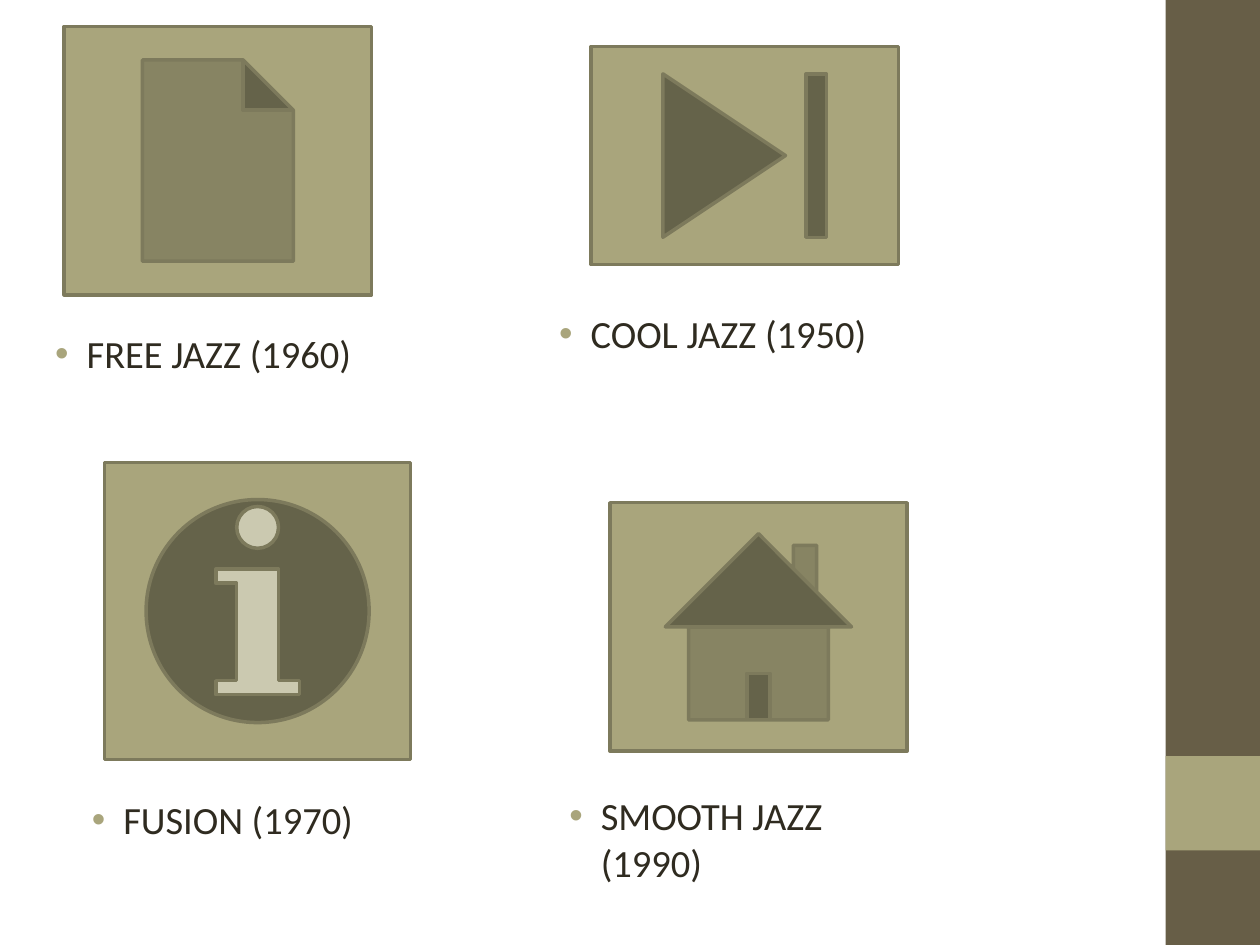
import pptx
import pptx.dml.color
import pptx.enum.shapes
import pptx.enum.text
import pptx.oxml.ns
import pptx.util
from lxml import etree

Inches = pptx.util.Inches
SHAPE = pptx.enum.shapes.MSO_SHAPE

BROWN = "675E47"
OLIVE = "A9A57C"
OUTLINE = "7D7A5C"
INK = "2F2B20"

# Jazz styles: label, label left/top, button shape, button left/top/width/height
STYLES = [
    ("COOL JAZZ (1950)", (4.21, 2.41),
     SHAPE.ACTION_BUTTON_END, (4.69, 0.37, 2.44, 1.73)),
    ("FREE JAZZ (1960)", (0.21, 2.57),
     SHAPE.ACTION_BUTTON_DOCUMENT, (0.51, 0.21, 2.44, 2.13)),
    ("FUSION (1970)", (0.5, 6.27),
     SHAPE.ACTION_BUTTON_INFORMATION, (0.83, 3.67, 2.43, 2.36)),
    ("SMOOTH JAZZ (1990)", (4.29, 6.24),
     SHAPE.ACTION_BUTTON_HOME, (4.84, 3.99, 2.36, 1.97)),
]
LABEL_SIZE = (3.05, 0.79)


def color(hex_value):
    return pptx.dml.color.RGBColor.from_string(hex_value)


def add_filled_shape(slide, kind, box, fill, outline=None):
    shape = slide.shapes.add_shape(kind, *map(Inches, box))
    shape.shadow.inherit = False
    shape.fill.solid()
    shape.fill.fore_color.rgb = color(fill)
    if outline:
        shape.line.color.rgb = color(outline)
        shape.line.width = pptx.util.Pt(2)
    else:
        shape.line.fill.background()


def add_bullet(paragraph, char, hex_value):
    qn = pptx.oxml.ns.qn
    properties = paragraph._p.get_or_add_pPr()
    properties.set("marL", str(Inches(0.38)))
    properties.set("indent", str(Inches(-0.25)))
    bullet_color = etree.SubElement(properties, qn("a:buClr"))
    etree.SubElement(bullet_color, qn("a:srgbClr"), val=hex_value)
    etree.SubElement(properties, qn("a:buFont"), typeface="Arial")
    etree.SubElement(properties, qn("a:buChar"), char=char)


def add_label(slide, text, position):
    label = slide.shapes.add_textbox(*map(Inches, position + LABEL_SIZE))
    frame = label.text_frame
    frame.word_wrap = True
    frame.vertical_anchor = pptx.enum.text.MSO_ANCHOR.TOP
    paragraph = frame.paragraphs[0]
    paragraph.text = text
    add_bullet(paragraph, "•", OLIVE)
    paragraph.font.name = "Calibri"
    paragraph.font.size = pptx.util.Pt(22)
    paragraph.font.color.rgb = color(INK)


def main():
    deck = pptx.Presentation()
    deck.slide_width, deck.slide_height = Inches(10), Inches(7.5)
    slide = deck.slides.add_slide(deck.slide_layouts[6])

    # Side band with its accent square
    add_filled_shape(slide, SHAPE.RECTANGLE, (9.25, 0, 0.75, 7.5), BROWN)
    add_filled_shape(slide, SHAPE.RECTANGLE, (9.25, 6, 0.75, 0.75), OLIVE)

    # One button and one label for each jazz style
    for name, label_position, button, button_box in STYLES:
        add_filled_shape(slide, button, button_box, OLIVE, OUTLINE)
        add_label(slide, name, label_position)

    deck.save("out.pptx")


if __name__ == "__main__":
    main()
